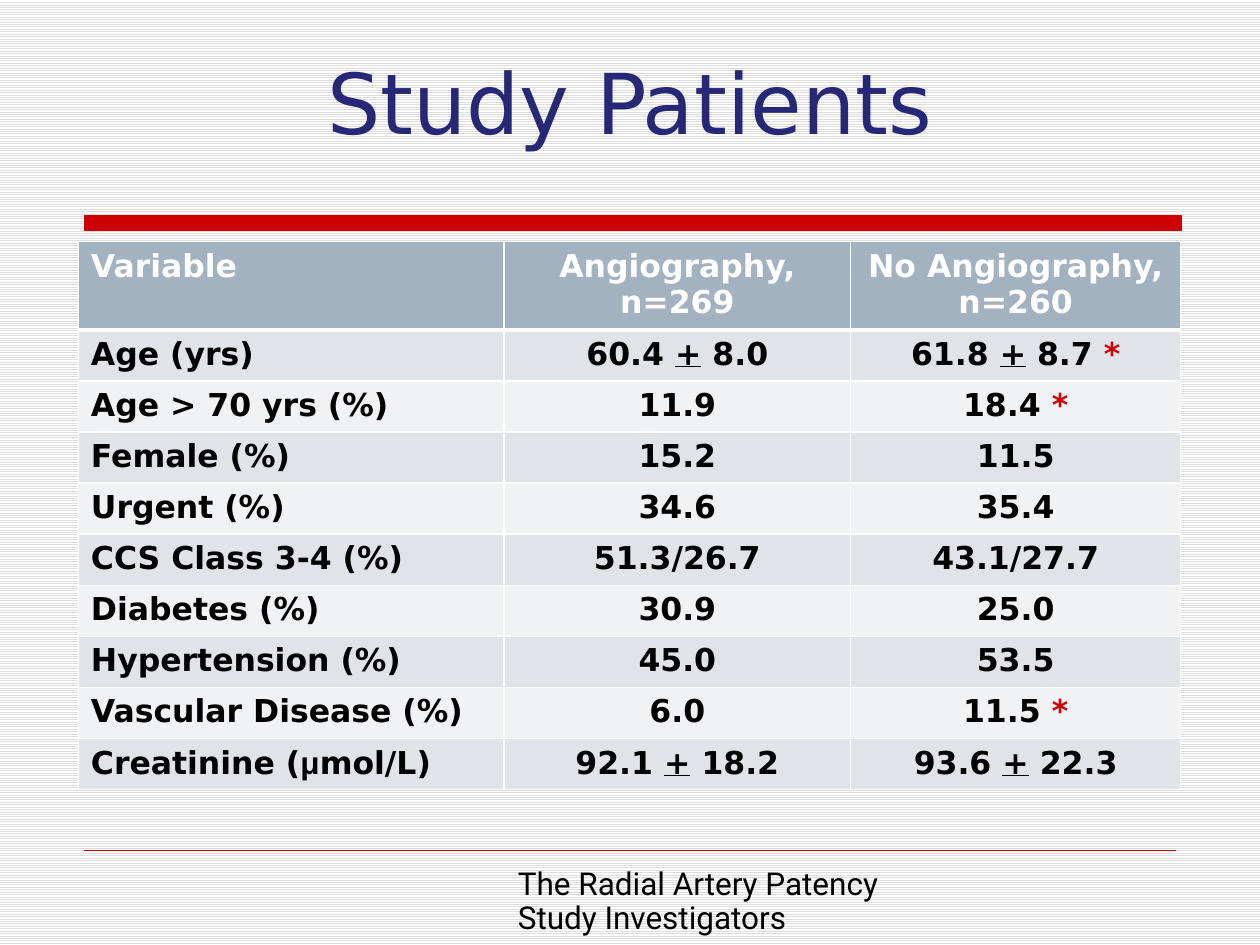
from itertools import groupby

from lxml import etree
from pptx import Presentation
from pptx.dml.color import RGBColor
from pptx.enum.dml import MSO_PATTERN
from pptx.enum.shapes import MSO_CONNECTOR, MSO_SHAPE
from pptx.enum.text import MSO_ANCHOR, MSO_AUTO_SIZE, PP_ALIGN
from pptx.oxml.ns import qn
from pptx.util import Cm, Pt

LEFT, CENTER = PP_ALIGN.LEFT, PP_ALIGN.CENTER
BOTTOM, TOP = MSO_ANCHOR.BOTTOM, MSO_ANCHOR.TOP
GROW = MSO_AUTO_SIZE.SHAPE_TO_FIT_TEXT
STRAIGHT, RECTANGLE = MSO_CONNECTOR.STRAIGHT, MSO_SHAPE.RECTANGLE
STRIPES = MSO_PATTERN.LIGHT_HORIZONTAL

ROWS = [
    ("Variable", "Angiography, n=269", "No Angiography, n=260"),
    ("Age (yrs)", "60.4 + 8.0", "61.8 + 8.7 *"),
    ("Age > 70 yrs (%)", "11.9", "18.4 *"),
    ("Female (%)", "15.2", "11.5"),
    ("Urgent (%)", "34.6", "35.4"),
    ("CCS Class 3-4 (%)", "51.3/26.7", "43.1/27.7"),
    ("Diabetes (%)", "30.9", "25.0"),
    ("Hypertension (%)", "45.0", "53.5"),
    ("Vascular Disease (%)", "6.0", "11.5 *"),
    ("Creatinine (μmol/L)", "92.1 + 18.2", "93.6 + 22.3"),
]


def rgb(color):
    return RGBColor.from_string(color)


class SlideBuilder:
    font, footer_font, symbol_font = "DejaVu Sans", "Roboto", "Arial"
    red, navy, black, white = "CC0000", "272777", "000000", "FFFFFF"
    header_fill, band_fills = "A3B2C1", ("F0F2F4", "E0E4E9")

    def __init__(self, slide):
        self.s = slide

    def background(self, fore, back):
        fill = self.s.background.fill
        fill.patterned()
        fill.pattern = STRIPES
        fill.fore_color.rgb = rgb(fore)
        fill.back_color.rgb = rgb(back)

    def bar(self, x, y, w, h):
        sp = self.s.shapes.add_shape(RECTANGLE, Cm(x), Cm(y), Cm(w), Cm(h))
        sp.shadow.inherit = False
        sp.fill.solid()
        sp.fill.fore_color.rgb = rgb(self.red)
        sp.line.color.rgb = rgb(self.red)
        sp.line.width = Pt(0.75)

    def rule(self, x1, x2, y):
        line = self.s.shapes.add_connector(STRAIGHT, Cm(x1), Cm(y), Cm(x2), Cm(y))
        line.line.color.rgb = rgb(self.red)
        line.line.width = Pt(0.25)
        etree.SubElement(line._element.spPr, qn("a:effectLst"))

    def style(self, p, size, color, name, align=LEFT, bold=False):
        p.alignment = align
        p.font.size = Pt(size)
        p.font.name = name
        p.font.bold = bold
        p.font.color.rgb = rgb(color)

    def text(self, text, x, y, w, h, size, color, name, align=LEFT,
             anchor=TOP, spacing=None, auto_size=None):
        tf = self.s.shapes.add_textbox(Cm(x), Cm(y), Cm(w), Cm(h)).text_frame
        tf.word_wrap = True
        tf.vertical_anchor = anchor
        tf.auto_size = auto_size
        p = tf.paragraphs[0]
        p.add_run().text = text
        p.line_spacing = spacing
        self.style(p, size, color, name, align)

    def marked_runs(self, p, text):
        """Underline plus signs, redden asterisks, set mu in the symbol font."""
        for mark, chars in groupby(text, lambda c: c if c in "+*μ" else ""):
            r = p.add_run()
            r.text = "".join(chars)
            if mark == "+":
                r.font.underline = True
            elif mark == "*":
                r.font.color.rgb = rgb(self.red)
            elif mark == "μ":
                r.font.name = self.symbol_font

    def borders(self, cell, bottom, top):
        tc_pr = cell._tc.get_or_add_tcPr()
        widths = {"a:lnL": 1, "a:lnR": 1, "a:lnT": top, "a:lnB": bottom}
        for i, (tag, width) in enumerate(widths.items()):
            ln = etree.Element(qn(tag), w=str(Pt(width)))
            fill = etree.SubElement(ln, qn("a:solidFill"))
            etree.SubElement(fill, qn("a:srgbClr"), val=self.white)
            tc_pr.insert(i, ln)

    def table(self, rows, x, y, col_widths, header_h, row_h):
        height = header_h + row_h * (len(rows) - 1)
        table = self.s.shapes.add_table(len(rows), len(col_widths), Cm(x), Cm(y),
                                        Cm(sum(col_widths)), Cm(height)).table
        for col, width in zip(table.columns, col_widths):
            col.width = Cm(width)
        for i, values in enumerate(rows):
            header = i == 0
            table.rows[i].height = Cm(header_h if header else row_h)
            for j, value in enumerate(values):
                cell = table.cell(i, j)
                cell.fill.solid()
                cell.fill.fore_color.rgb = rgb(
                    self.header_fill if header else self.band_fills[i % 2])
                self.borders(cell, bottom=3 if header else 1, top=3 if i == 1 else 1)
                p = cell.text_frame.paragraphs[0]
                self.marked_runs(p, value)
                self.style(p, 18, self.white if header else self.black,
                           self.font, CENTER if j else LEFT, bold=True)


def main():
    prs = Presentation()
    prs.slide_width, prs.slide_height = Cm(25.4), Cm(19.05)
    b = SlideBuilder(prs.slides.add_slide(prs.slide_layouts[6]))

    # Background and decoration
    b.background("DDDDDD", "FFFFFF")
    b.bar(1.7, 4.35, 22.11, 0.3)
    b.rule(1.7, 23.7, 17.15)

    # Footer
    b.text("The Radial Artery Patency Study Investigators", 10.19, 17.37, 9.5, 1.63,
           18, b.black, b.footer_font, spacing=0.9, auto_size=GROW)

    # Title
    b.text("Study Patients", 0, 0.84, 25.4, 2.34, 48, b.navy, b.font, CENTER, BOTTOM)

    # Patient characteristics
    b.table(ROWS, 1.58, 4.87, (8.58, 6.99, 6.65), header_h=1.73, row_h=1.03)

    prs.save("out.pptx")


if __name__ == "__main__":
    main()
